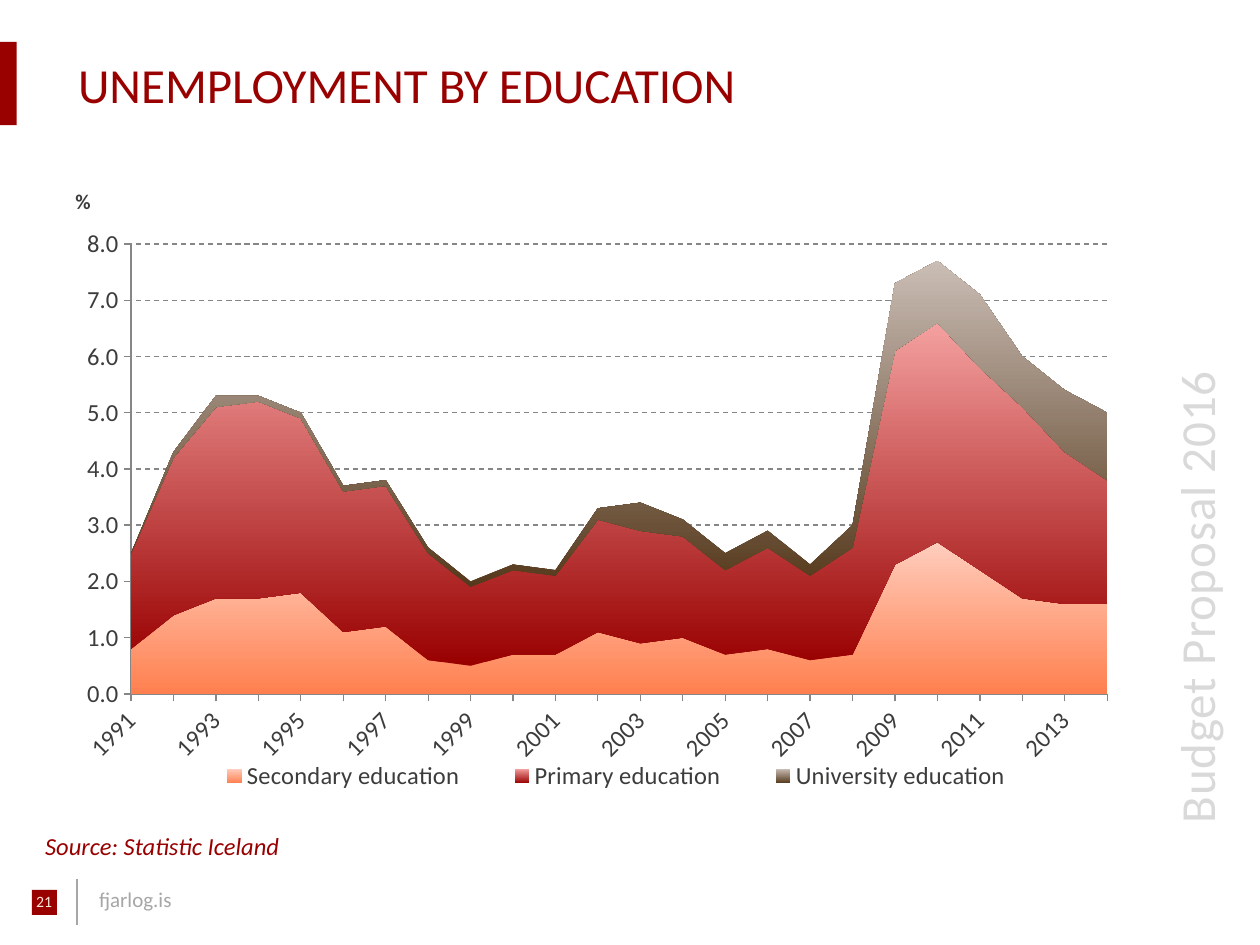
from dataclasses import dataclass

from lxml import etree
from pptx import Presentation
from pptx.chart.data import CategoryChartData
from pptx.dml.color import RGBColor
from pptx.enum.chart import XL_CHART_TYPE, XL_LEGEND_POSITION, XL_TICK_MARK
from pptx.enum.dml import MSO_LINE
from pptx.enum.shapes import MSO_CONNECTOR, MSO_SHAPE
from pptx.enum.text import MSO_ANCHOR, PP_ALIGN
from pptx.oxml.ns import qn
from pptx.util import Pt

AREA = XL_CHART_TYPE.AREA_STACKED
BOTTOM = XL_LEGEND_POSITION.BOTTOM
OUT = XL_TICK_MARK.OUTSIDE
DASH = MSO_LINE.DASH
LINE = MSO_CONNECTOR.STRAIGHT
RECT = MSO_SHAPE.RECTANGLE
MIDDLE = MSO_ANCHOR.MIDDLE
LEFT, CENTER = PP_ALIGN.LEFT, PP_ALIGN.CENTER


@dataclass
class Theme:
    font: str = "Calibri"
    red: str = "990000"
    ink: str = "3C3C3B"
    gray: str = "A6A6A6"
    pale: str = "D9D9D9"
    cream: str = "FFE6DC"
    grid: str = "868686"
    head: int = 28
    label: int = 14
    small: int = 12
    tiny: int = 9


# name, series order, bottom colour, top colour, values; from the lowest band up
BANDS = [
    ("Secondary education", 1, "FF804F", "FFCDBD",
     [0.8, 1.4, 1.7, 1.7, 1.8, 1.1, 1.2, 0.6, 0.5, 0.7, 0.7, 1.1,
      0.9, 1, 0.7, 0.8, 0.6, 0.7, 2.3, 2.7, 2.2, 1.7, 1.6, 1.6]),
    ("Primary education", 0, "990000", "F4A0A0",
     [1.7, 2.8, 3.4, 3.5, 3.1, 2.5, 2.5, 1.9, 1.4, 1.5, 1.4, 2,
      2, 1.8, 1.5, 1.8, 1.5, 1.9, 3.8, 3.9, 3.6, 3.4, 2.7, 2.2]),
    ("University education", 2, "55391C", "CABDB5",
     [0, 0.1, 0.2, 0.1, 0.1, 0.1, 0.1, 0.1, 0.1, 0.1, 0.1, 0.2,
      0.5, 0.3, 0.3, 0.3, 0.2, 0.4, 1.2, 1.1, 1.3, 0.9, 1.1, 1.2]),
]


def rgb(code):
    return RGBColor.from_string(code)


def layout(box, inner=False):
    """Manual chart layout from left, top, width, height in percent."""
    root = etree.Element(qn("c:layout"))
    manual = etree.SubElement(root, qn("c:manualLayout"))
    parts = [("layoutTarget", "inner")] if inner else []
    parts += [("xMode", "edge"), ("yMode", "edge")]
    parts += [(tag, f"{share / 100:.3f}") for tag, share in zip("xywh", box)]
    for tag, value in parts:
        etree.SubElement(manual, qn("c:" + tag), val=value)
    return root


class Maker:
    def __init__(self, slide, theme):
        self.slide, self.theme = slide, theme

    def style(self, font, size, color, bold=False, italic=False):
        font.name, font.size = self.theme.font, Pt(size)
        font.bold, font.italic = bold, italic
        font.color.rgb = rgb(color)

    def title(self, text, box):
        shape = self.slide.shapes.title
        shape.left, shape.top, shape.width, shape.height = map(Pt, box)
        frame = shape.text_frame
        frame.text = text
        frame.vertical_anchor = MIDDLE
        frame.margin_left = frame.margin_right = Pt(8.64)
        para = frame.paragraphs[0]
        para.alignment = LEFT
        self.style(para.font, self.theme.head, self.theme.red)

    def text(self, text, box, size, color, align=LEFT, wrap=True, **look):
        shape = self.slide.shapes.add_textbox(*map(Pt, box))
        frame = shape.text_frame
        frame.word_wrap = wrap
        frame.text = text
        para = frame.paragraphs[0]
        para.alignment = align
        self.style(para.font, size, color, **look)
        return shape

    def block(self, box, color):
        shape = self.slide.shapes.add_shape(RECT, *map(Pt, box))
        shape.shadow.inherit = False
        shape.fill.solid()
        shape.fill.fore_color.rgb = rgb(color)
        shape.line.fill.background()

    def rule(self, ends, color):
        line = self.slide.shapes.add_connector(LINE, *map(Pt, ends))
        line.line.color.rgb = rgb(color)
        line.line.width = Pt(1)
        etree.SubElement(line._element.spPr, qn("a:effectLst"))

    def chart(self, years, bands, box, plot, key):
        data = CategoryChartData(number_format="0.0")
        data.categories = years
        for name, _, _, _, vals in bands:
            data.add_series(name, vals)
        chart = self.slide.shapes.add_chart(AREA, *map(Pt, box), data).chart
        chart.has_title = False
        self.style(chart.font, self.theme.label, self.theme.ink)

        # Bands fade upwards from dark to light
        for series, band in zip(list(chart.plots[0].series), bands):
            _, order, low, high, _ = band
            fill = series.format.fill
            fill.gradient()
            fill.gradient_angle = 90
            for stop, color in zip(fill.gradient_stops, (low, high)):
                stop.color.rgb = rgb(color)
            series._element.find(qn("c:order")).set("val", str(order))

        # Legend
        chart.has_legend = True
        legend = chart.legend
        legend.position = BOTTOM
        legend.include_in_layout = False
        for old in legend._element.findall(qn("c:layout")):
            legend._element.remove(old)
        legend._element.find(qn("c:legendPos")).addnext(layout(key))

        # Axes
        cat, val = chart.category_axis, chart.value_axis
        for axis in (cat, val):
            axis.major_tick_mark = OUT
            axis.format.line.color.rgb = rgb(self.theme.grid)
            self.style(axis.tick_labels.font, self.theme.label, self.theme.ink)
        val.minimum_scale, val.maximum_scale, val.major_unit = 0, 8, 1
        val.tick_labels.number_format = "0.0"
        val.tick_labels.number_format_is_linked = False
        val.has_major_gridlines = True
        grid = val.major_gridlines.format.line
        grid.color.rgb = rgb(self.theme.grid)
        grid.width, grid.dash_style = Pt(0.75), DASH
        val._element.find(qn("c:crossBetween")).set("val", "midCat")
        cat.has_major_gridlines = False

        # Slanted label for every second year
        cat._element.find(qn("c:txPr")).find(qn("a:bodyPr")).set("rot", "-2700000")
        skip = etree.Element(qn("c:tickLblSkip"), val="2")
        cat._element.find(qn("c:noMultiLvlLbl")).addprevious(skip)

        # Fixed inner plot area
        area = chart._chartSpace.chart.plotArea
        for old in area.findall(qn("c:layout")):
            area.remove(old)
        area.insert(0, layout(plot, inner=True))


def main():
    deck = Presentation()
    deck.slide_width, deck.slide_height = Pt(720), Pt(540)
    look = Theme()
    make = Maker(deck.slides.add_slide(deck.slide_layouts[5]), look)

    # Frame: red marks, side caption and footer
    make.block((18.2, 508.5, 14.4, 14.4), look.red)
    make.block((0, 24, 9.5, 47.5), look.red)
    side = make.text("Budget Proposal 2016", (488.2, 262, 390.2, 41),
                     look.head, look.pale)
    side.rotation = 270
    run = side.text_frame.paragraphs[0].runs[0]
    run._r.get_or_add_rPr().set("spc", "50")
    make.text("fjarlog.is", (49.5, 503.2, 135, 22), look.small, look.gray)
    make.rule((43.8, 502.5, 43.8, 528.5), look.gray)
    make.text("21", (0, 506, 50.4, 34), look.tiny, look.cream, CENTER)

    # Title
    make.title("UNEMPLOYMENT BY EDUCATION", (36, 24, 652, 47.5))

    # Chart with its unit and source
    years = [str(year) for year in range(1991, 2015)]
    make.chart(years, BANDS, (36, 90.7, 607.7, 369.4),
               plot=(6.4, 13.2, 91.8, 69.6), key=(11, 92.5, 82, 6))
    make.text("Source: Statistic Iceland", (18.7, 471.2, 560, 24.5),
              look.label, look.red, italic=True)
    make.text("%", (36, 104.2, 24.5, 21.5), look.small, look.ink,
              wrap=False, bold=True)

    deck.save("out.pptx")


if __name__ == "__main__":
    main()
